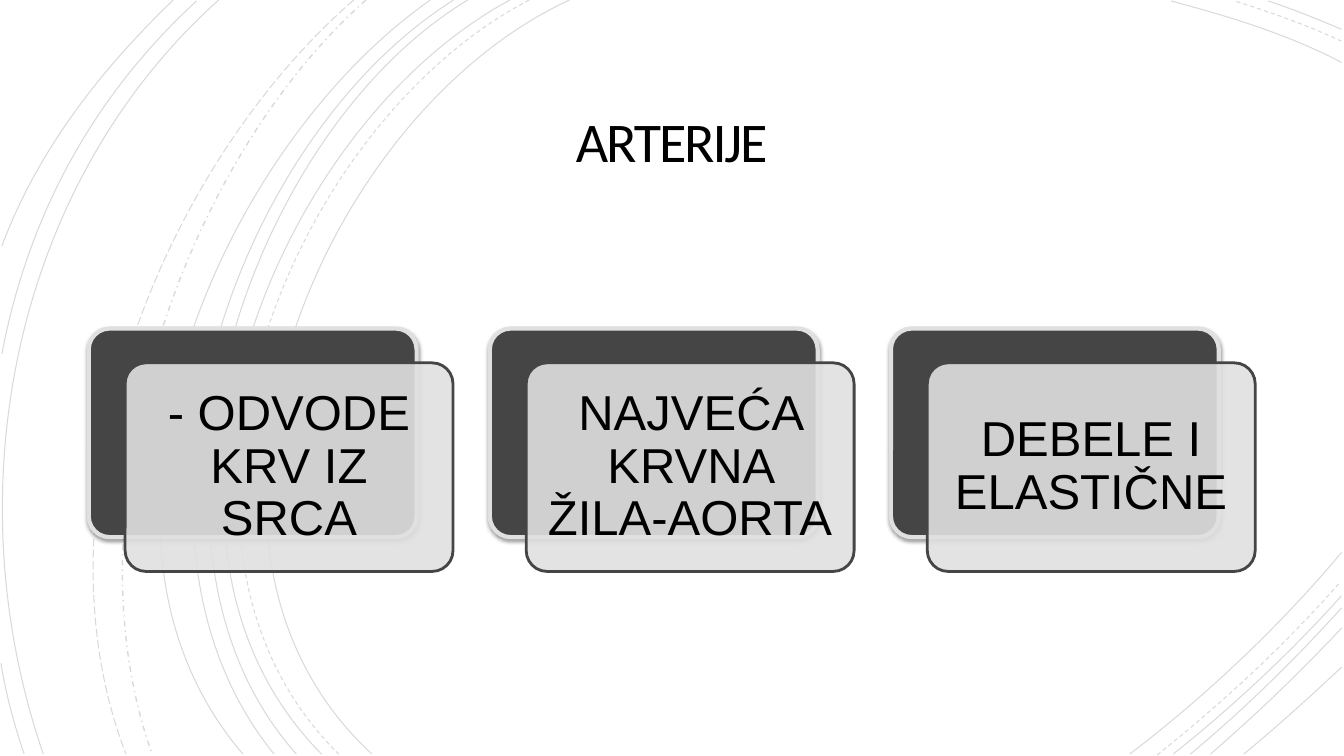
from dataclasses import dataclass

from lxml import etree
from pptx import Presentation
from pptx import util as u
from pptx.dml import color
from pptx.enum import dml, shapes, text
from pptx.oxml import ns

Pt = u.Pt
Point = tuple[float, float]
COLORS = {"ink": "000000", "dark": "454545", "pale": "E0E0E0", "paper": "FFFFFF"}
EDGE, BASE = 958.3, 538.6
CARD_LEFT, CARD_TOP, CARD_PITCH = 63.4, 234.7, 286.5
CARD_WIDTH, CARD_HEIGHT = 234.2, 149
FRONT_SHIFT_X, FRONT_SHIFT_Y = 26, 24.5


@dataclass(frozen=True)
class Arc:
    start: Point
    bend_out: Point
    bend_in: Point
    end: Point
    dash: str = "SOLID"
    weight: float = 0.75


@dataclass(frozen=True)
class Card:
    fill: str
    outline: str
    weight: float


BACK = Card("dark", "pale", 3)
FRONT = Card("pale", "dark", 2)
FACTS = ["- ODVODE KRV IZ SRCA", "NAJVEĆA KRVNA ŽILA-AORTA", "DEBELE I ELASTIČNE"]

ARCS = [
    Arc((406.8, 0), (226.8, 82.8), (103, 388.8), (265.7, BASE)),
    Arc((378, 0), (205.2, 90), (88.6, 386.6), (241.9, BASE), "DASH"),
    Arc((364.3, 0), (194.4, 91.4), (79.2, 386.6), (229.7, BASE)),
    Arc((334.1, 0), (175.7, 95.8), (79.2, 389.5), (211.7, BASE)),
    Arc((324, 0), (166.3, 99.4), (69.8, 383.8), (195.8, BASE)),
    Arc((307.4, 0), (156.2, 105.8), (38.2, 380.9), (173.5, BASE)),
    Arc((261.4, 0), (126.7, 119.5), (46.8, 366.5), (108.7, BASE), "DASH_DOT", 1),
    Arc((252.7, 0), (113, 121.7), (20.9, 359.3), (90, BASE), "LONG_DASH"),
    Arc((156.2, 0), (7.9, 133.2), (-33.1, 352.8), (31, BASE)),
    Arc((140.4, 0.7), (66.2, 69.1), (20.2, 154.1), (1.4, 252.7)),
    Arc((0.7, 473.8), (4.3, 496.1), (10.1, 517.7), (17.3, BASE)),
    Arc((123.8, 0), (72, 49.7), (26.6, 108), (1.4, 175.7)),
    Arc((EDGE, 44.6), (920.2, 24.5), (877, 11.5), (836.6, 0.7)),
    Arc((EDGE, 29.5), (933.8, 18), (907.2, 8.6), (882, 0.7), "DASH"),
    Arc((EDGE, 20.9), (941, 13.7), (923.8, 6.5), (905.8, 0.7)),
    Arc((807.1, BASE), (861.8, 496.8), (913.7, 447.8), (EDGE, 394.6)),
    Arc((826.6, 539.3), (873.4, 501.8), (918, 460.8), (957.6, 415.4), "DASH"),
    Arc((838.1, BASE), (880.6, 504.7), (921.6, 466.6), (EDGE, 425.5)),
    Arc((850.3, BASE), (888.5, 506.9), (924.5, 471.6), (EDGE, 434.2)),
    Arc((864.7, BASE), (897.1, 510.5), (928.8, 480.2), (EDGE, 448.6)),
    Arc((888.5, BASE), (912.2, 519.1), (935.3, 498.2), (EDGE, 476.6)),
]


def rgb(name: str) -> color.RGBColor:
    return color.RGBColor.from_string(COLORS[name])


def set_alpha(parent, percent: int) -> None:
    tint = next(parent.iter(ns.qn("a:srgbClr")))
    etree.SubElement(tint, ns.qn("a:alpha"), val=str(percent * 1000))


def draw_arc(slide, arc: Arc) -> None:
    start, *rest = [(Pt(x), Pt(y)) for x, y in (arc.start, arc.bend_out, arc.bend_in, arc.end)]
    builder = slide.shapes.build_freeform(*start)
    builder.add_line_segments(rest, close=False)
    curve = builder.convert_to_shape()
    curve.shadow.inherit = False
    curve.fill.background()
    curve.line.color.rgb = rgb("ink")
    curve.line.width = Pt(arc.weight)
    curve.line.dash_style = dml.MSO_LINE[arc.dash]
    set_alpha(curve.line._ln, 15)
    segments = list(curve._element.iter(ns.qn("a:lnTo")))
    bezier = etree.SubElement(segments[0].getparent(), ns.qn("a:cubicBezTo"))
    for segment in segments:
        bezier.append(segment[0])
        segment.getparent().remove(segment)


def draw_card(slide, card: Card, left: float, top: float):
    panel = slide.shapes.add_shape(
        shapes.MSO_SHAPE.ROUNDED_RECTANGLE,
        Pt(left), Pt(top), Pt(CARD_WIDTH), Pt(CARD_HEIGHT))
    panel.adjustments[0] = 0.1
    panel.shadow.inherit = False
    panel.fill.solid()
    panel.fill.fore_color.rgb = rgb(card.fill)
    panel.line.color.rgb = rgb(card.outline)
    panel.line.width = Pt(card.weight)
    return panel


def add_shadow(panel) -> None:
    effects = panel._element.spPr.find(ns.qn("a:effectLst"))
    shade = etree.SubElement(
        effects, ns.qn("a:outerShdw"), blurRad=str(Pt(3.1)), dist=str(Pt(1.6)),
        dir="5400000", rotWithShape="0")
    etree.SubElement(shade, ns.qn("a:srgbClr"), val=COLORS["ink"])
    set_alpha(shade, 38)


def write(holder, words: str, *, font: str, size: float, inset: float,
          leading: float, tracking: float = 0) -> None:
    frame = holder.text_frame
    frame.word_wrap = True
    frame.vertical_anchor = text.MSO_ANCHOR.MIDDLE
    frame.margin_left = frame.margin_right = Pt(inset)
    frame.margin_top = frame.margin_bottom = Pt(inset)
    line = frame.paragraphs[0]
    line.alignment = text.PP_ALIGN.CENTER
    line.line_spacing = leading
    run = line.add_run()
    run.text = words
    run.font.name = font
    run.font.size = Pt(size)
    run.font.color.rgb = rgb("ink")
    if tracking:
        run.font._element.set("spc", str(round(tracking * 100)))


def main() -> None:
    deck = Presentation()
    deck.slide_width, deck.slide_height = Pt(960), Pt(540)
    slide = deck.slides.add_slide(deck.slide_layouts[6])
    slide.background.fill.solid()
    slide.background.fill.fore_color.rgb = rgb("paper")

    for arc in ARCS:
        draw_arc(slide, arc)

    title = slide.shapes.add_textbox(Pt(138.2), Pt(62.6), Pt(683.3), Pt(82.8))
    write(title, "ARTERIJE", font="Calibri", size=40, inset=18, leading=0.85, tracking=-1.5)

    for index, fact in enumerate(FACTS):
        left = CARD_LEFT + index * CARD_PITCH
        add_shadow(draw_card(slide, BACK, left, CARD_TOP))
        front = draw_card(slide, FRONT, left + FRONT_SHIFT_X, CARD_TOP + FRONT_SHIFT_Y)
        set_alpha(front._element.spPr.find(ns.qn("a:solidFill")), 90)
        write(front, fact, font="Arial", size=35, inset=10.5, leading=0.9)

    deck.save("out.pptx")


if __name__ == "__main__":
    main()
